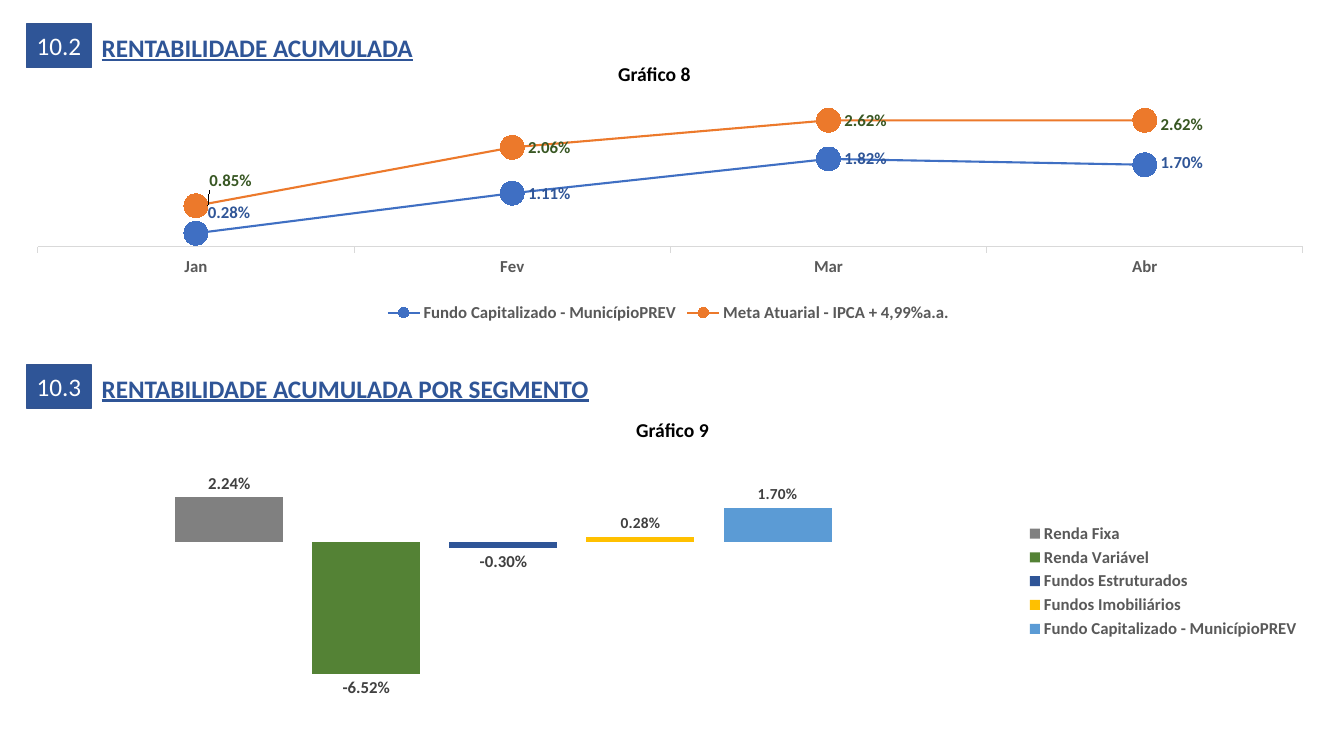
from dataclasses import dataclass
from typing import Any, NamedTuple

from lxml.etree import SubElement
from pptx import Presentation
from pptx.chart.chart import Chart
from pptx.chart.data import CategoryChartData
from pptx.dml.color import RGBColor
from pptx.enum.chart import XL_CHART_TYPE, XL_LABEL_POSITION, XL_LEGEND_POSITION, XL_MARKER_STYLE, XL_TICK_MARK
from pptx.enum.shapes import MSO_SHAPE
from pptx.enum.text import MSO_ANCHOR, MSO_AUTO_SIZE, PP_ALIGN
from pptx.oxml.ns import qn
from pptx.slide import Slide
from pptx.text.text import Font
from pptx.util import Inches, Pt


@dataclass(frozen=True)
class Theme:
    face: str = "Calibri"
    navy: str = "2F5597"
    navy_edge: str = "325491"
    white: str = "FFFFFF"
    black: str = "000000"
    grey_text: str = "595959"
    dark_text: str = "404040"
    axis: str = "D9D9D9"
    blue: str = "3F6FC3"
    orange: str = "EC792B"
    forest: str = "385723"
    grey: str = "808080"
    green: str = "548235"
    gold: str = "FFC000"
    sky: str = "5B9BD5"
    heading: int = 18
    caption: int = 14
    label: int = 12
    small_label: int = 11
    base: int = 10


class Section(NamedTuple):
    number: str
    title: str
    top: float
    title_width: float
    caption: str
    caption_left: float
    caption_top: float


class Offset(NamedTuple):
    point: int
    x: float
    y: float


class Measure(NamedTuple):
    name: str
    values: tuple[float, ...]
    color: str
    label_color: str
    label_size: int
    offsets: tuple[Offset, ...] = ()


class ChartSpec(NamedTuple):
    kind: XL_CHART_TYPE
    top: float
    categories: tuple[str, ...]
    measures: tuple[Measure, ...]
    value_range: dict[str, float]
    plot_box: dict[str, Any]
    legend: XL_LEGEND_POSITION
    label_position: XL_LABEL_POSITION


THEME = Theme()
PERCENT = "0.00%"
FUND = "Fundo Capitalizado - MunicípioPREV"

SECTIONS = (
    Section("10.2", "RENTABILIDADE ACUMULADA", 0.24, 4.42, "Gráfico 8", 5.45, 0.57),
    Section("10.3", "RENTABILIDADE ACUMULADA POR SEGMENTO", 3.62, 5.58, "Gráfico 9", 5.63, 4.1),
)

MONTHLY = ChartSpec(
    XL_CHART_TYPE.LINE_MARKERS, 0.95, ("Jan", "Fev", "Mar", "Abr"),
    (
        Measure(FUND, (0.0028, 0.0111, 0.0182, 0.017), THEME.blue, THEME.navy, THEME.label,
                (Offset(0, -0.003, -0.09), Offset(3, 0, -0.01))),
        Measure("Meta Atuarial - IPCA + 4,99%a.a.", (0.0085, 0.0206, 0.0262, 0.0262),
                THEME.orange, THEME.forest, THEME.label,
                (Offset(0, -0.002, -0.11), Offset(3, 0, 0.017))),
    ),
    {"minimum_scale": 0, "maximum_scale": 0.028, "major_unit": 0.001},
    {"x": 0.009, "y": 0.069, "w": 0.985, "h": 0.586},
    XL_LEGEND_POSITION.BOTTOM, XL_LABEL_POSITION.RIGHT,
)

SEGMENTS = ChartSpec(
    XL_CHART_TYPE.COLUMN_CLUSTERED, 4.63, ("1",),
    (
        Measure("Renda Fixa", (0.0224,), THEME.grey, THEME.dark_text, THEME.label),
        Measure("Renda Variável", (-0.0652,), THEME.green, THEME.dark_text, THEME.label),
        Measure("Fundos Estruturados", (-0.003,), THEME.navy, THEME.dark_text, THEME.label),
        Measure("Fundos Imobiliários", (0.0028,), THEME.gold, THEME.dark_text, THEME.small_label),
        Measure(FUND, (0.017,), THEME.sky, THEME.dark_text, THEME.small_label),
    ),
    {"minimum_scale": -0.072, "maximum_scale": 0.03},
    {"x": 0.024, "y": 0.066, "w": 0.695, "h": 0.898},
    XL_LEGEND_POSITION.RIGHT, XL_LABEL_POSITION.OUTSIDE_END,
)


def apply(target: Any, values: dict[str, Any]) -> None:
    for name, value in values.items():
        setattr(target, name, value)


def style_font(font: Font, size: int, color: str, **extra: bool) -> None:
    apply(font, {"name": THEME.face, "size": Pt(size), **extra})
    font.color.rgb = RGBColor.from_string(color)


def paint(fill: Any, color: str) -> None:
    fill.solid()
    fill.fore_color.rgb = RGBColor.from_string(color)


def place(parent: Any, index: int, settings: dict[str, Any]) -> None:
    for stale in parent.findall(qn("c:layout")):
        parent.remove(stale)
    layout = SubElement(parent, qn("c:layout"))
    parent.insert(index, layout)
    manual = SubElement(layout, qn("c:manualLayout"))
    for tag, value in settings.items():
        SubElement(manual, qn(f"c:{tag}")).set("val", str(value))


def add_text(slide: Slide, text: str, box: tuple[float, ...], align: PP_ALIGN,
             size: int, color: str, **extra: bool) -> None:
    frame = slide.shapes.add_textbox(*map(Inches, box)).text_frame
    apply(frame, {"word_wrap": True, "auto_size": MSO_AUTO_SIZE.SHAPE_TO_FIT_TEXT, "text": text})
    frame.paragraphs[0].alignment = align
    style_font(frame.paragraphs[0].runs[0].font, size, color, **extra)


def add_section(slide: Slide, section: Section) -> None:
    badge = slide.shapes.add_shape(
        MSO_SHAPE.RECTANGLE, *map(Inches, (0.26, section.top, 0.65, 0.43)))
    badge.shadow.inherit = False
    paint(badge.fill, THEME.navy)
    paint(badge.line.fill, THEME.navy_edge)
    badge.line.width = Pt(1)
    apply(badge.text_frame, {"text": section.number, "vertical_anchor": MSO_ANCHOR.MIDDLE})
    number = badge.text_frame.paragraphs[0]
    number.alignment = PP_ALIGN.CENTER
    style_font(number.runs[0].font, THEME.heading, THEME.white)
    add_text(slide, section.title, (0.91, section.top + 0.03, section.title_width, 0.4),
             PP_ALIGN.LEFT, THEME.heading, THEME.navy, bold=True, underline=True)
    add_text(slide, section.caption, (section.caption_left, section.caption_top, 2.08, 0.34),
             PP_ALIGN.CENTER, THEME.caption, THEME.black, bold=True)


def label_series(series: Any, measure: Measure, position: XL_LABEL_POSITION) -> None:
    labels = series.data_labels
    apply(labels, {"show_value": True, "number_format": PERCENT,
                   "number_format_is_linked": False, "position": position})
    style_font(labels.font, measure.label_size, measure.label_color, bold=True)
    for offset in measure.offsets:
        label = series.points[offset.point].data_label
        style_font(label.font, measure.label_size, measure.label_color, bold=True)
        label.position = position
        element = series._element.xpath(f".//c:dLbl[c:idx/@val='{offset.point}']")[0]
        place(element, 1, {"x": offset.x, "y": offset.y})


def add_performance_chart(slide: Slide, spec: ChartSpec) -> Chart:
    data = CategoryChartData(number_format=PERCENT)
    data.categories = spec.categories
    for measure in spec.measures:
        data.add_series(measure.name, measure.values)
    chart = slide.shapes.add_chart(
        spec.kind, *map(Inches, (0.26, spec.top, 12.74, 2.29)), data).chart
    style_font(chart.font, THEME.base, THEME.black)
    apply(chart, {"has_title": False, "has_legend": True})
    apply(chart.legend, {"position": spec.legend, "include_in_layout": False})
    style_font(chart.legend.font, THEME.label, THEME.grey_text, bold=True)
    apply(chart.value_axis, {"visible": False, "has_major_gridlines": False, **spec.value_range})
    chart.value_axis.tick_labels.number_format = PERCENT
    place(chart._chartSpace.chart.plotArea, 0,
          {"layoutTarget": "inner", "xMode": "edge", "yMode": "edge", **spec.plot_box})
    chart.plots[0].vary_by_categories = False
    for series, measure in zip(chart.plots[0].series, spec.measures):
        label_series(series, measure, spec.label_position)
    return chart


def add_monthly_chart(slide: Slide) -> None:
    chart = add_performance_chart(slide, MONTHLY)
    months = chart.category_axis
    months.major_tick_mark = XL_TICK_MARK.OUTSIDE
    style_font(months.tick_labels.font, THEME.label, THEME.grey_text, bold=True)
    paint(months.format.line.fill, THEME.axis)
    months.format.line.width = Pt(0.75)
    for series, measure in zip(chart.plots[0].series, MONTHLY.measures):
        series.smooth = False
        paint(series.format.line.fill, measure.color)
        series.format.line.width = Pt(1.5)
        apply(series.marker, {"style": XL_MARKER_STYLE.CIRCLE, "size": 17})
        paint(series.marker.format.fill, measure.color)
        paint(series.marker.format.line.fill, measure.color)


def add_segment_chart(slide: Slide) -> None:
    chart = add_performance_chart(slide, SEGMENTS)
    chart.category_axis.visible = False
    apply(chart.plots[0], {"gap_width": 219, "overlap": -27})
    for series, measure in zip(chart.plots[0].series, SEGMENTS.measures):
        series.invert_if_negative = False
        paint(series.format.fill, measure.color)


def main() -> None:
    deck = Presentation()
    apply(deck, {"slide_width": Inches(13.33), "slide_height": Inches(7.5)})
    slide = deck.slides.add_slide(deck.slide_layouts[6])
    for section in SECTIONS:
        add_section(slide, section)
    add_monthly_chart(slide)
    add_segment_chart(slide)
    deck.save("out.pptx")


if __name__ == "__main__":
    main()
